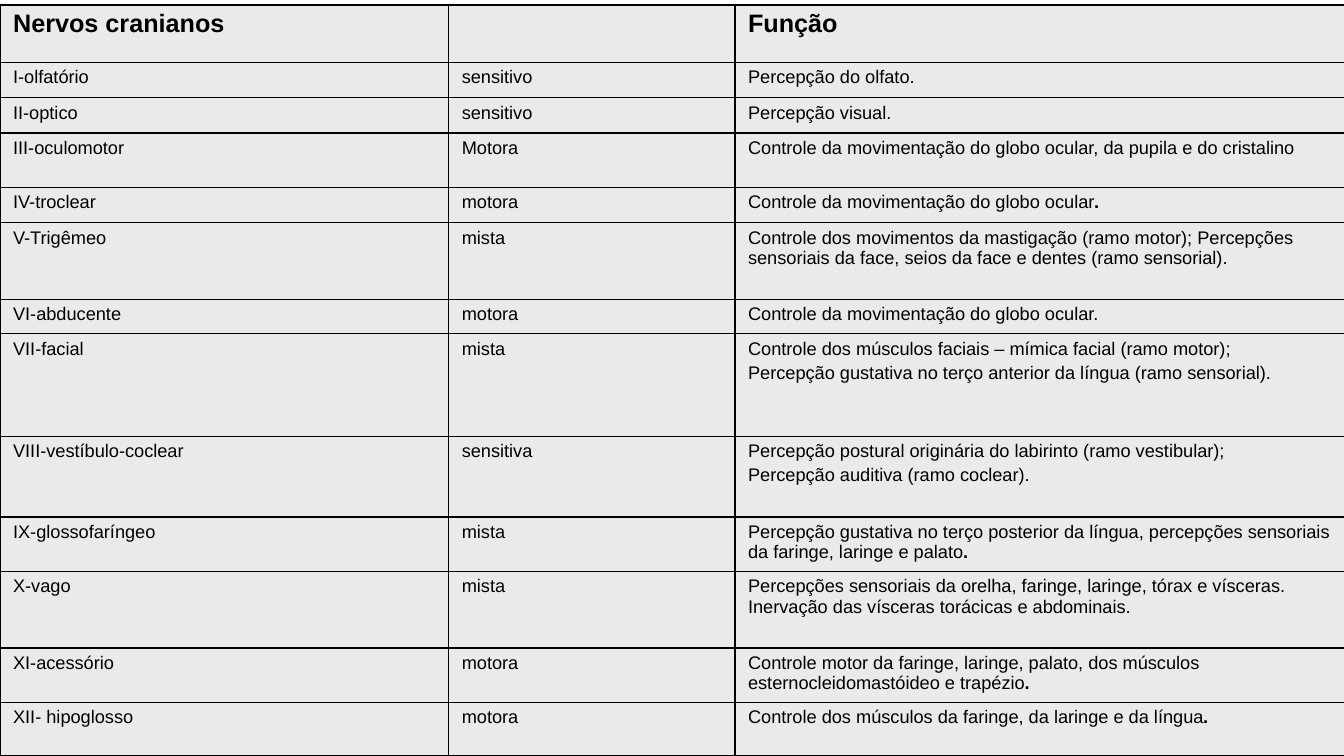
from lxml import etree
from pptx import Presentation
from pptx.dml.color import RGBColor
from pptx.oxml import ns
from pptx.util import Inches, Pt

BLACK = RGBColor(0x00, 0x00, 0x00)
GRAY = RGBColor(0xEA, 0xEA, 0xEA)
THIN, THICK = Pt(1), Pt(2.25)

COL_WIDTHS = [4.45, 2.84, 6.05]

# Row height, nerve, type, function; "\n" parts paragraphs, "|" starts bold text
ROWS = [
    (0.57, "Nervos cranianos", "", "Função"),
    (0.35, "I-olfatório", "sensitivo", "Percepção do olfato."),
    (0.35, "II-optico", "sensitivo", "Percepção visual."),
    (0.54, "III-oculomotor", "Motora",
     "Controle da movimentação do globo ocular, da pupila e do cristalino"),
    (0.35, "IV-troclear", "motora", "Controle da movimentação do globo ocular|."),
    (0.76, "V-Trigêmeo", "mista",
     "Controle dos movimentos da mastigação (ramo motor); Percepções "
     "sensoriais da face, seios da face e dentes (ramo sensorial)."),
    (0.34, "VI-abducente", "motora", "Controle da movimentação do globo ocular."),
    (1.02, "VII-facial", "mista",
     "Controle dos músculos faciais – mímica facial (ramo motor);\n"
     "Percepção gustativa no terço anterior da língua (ramo sensorial)."),
    (0.8, "VIII-vestíbulo-coclear", "sensitiva",
     "Percepção postural originária do labirinto (ramo vestibular);\n"
     "Percepção auditiva (ramo coclear)."),
    (0.54, "IX-glossofaríngeo", "mista",
     "Percepção gustativa no terço posterior da língua, percepções "
     "sensoriais da faringe, laringe e palato|."),
    (0.76, "X-vago", "mista",
     "Percepções sensoriais da orelha, faringe, laringe, tórax e vísceras. "
     "Inervação das vísceras torácicas e abdominais."),
    (0.54, "XI-acessório", "motora",
     "Controle motor da faringe, laringe, palato, dos músculos "
     "esternocleidomastóideo e trapézio|."),
    (0.54, "XII- hipoglosso", "motora",
     "Controle dos músculos da faringe, da laringe e da língua|."),
]


def add_border(cell, side, width):
    ln = etree.SubElement(cell._tc.get_or_add_tcPr(), ns.qn("a:" + side), w=str(width))
    fill = etree.SubElement(ln, ns.qn("a:solidFill"))
    etree.SubElement(fill, ns.qn("a:srgbClr"), val=str(BLACK))


def fill_text(cell, content, header):
    tf = cell.text_frame
    tf.text = content.replace("|.", "")
    for i, (p, line) in enumerate(zip(tf.paragraphs, content.split("\n"))):
        if i:
            p.space_before = Pt(2.6)
        if "|" in line:
            p.add_run().text = line.split("|")[1]
        for n, r in enumerate(p.runs):
            r.font.name = "Arial"
            r.font.size = Pt(18 if header else 13)
            r.font.bold = header or n > 0
            r.font.color.rgb = BLACK


prs = Presentation()
prs.slide_width, prs.slide_height = Inches(13.33), Inches(7.5)
s = prs.slides.add_slide(prs.slide_layouts[6])

# Table of cranial nerves
table = s.shapes.add_table(len(ROWS), len(COL_WIDTHS), Inches(0), Inches(0.05),
                           Inches(13.33), Inches(7.45)).table
table.first_row = table.horz_banding = False
for column, width in zip(table.columns, COL_WIDTHS):
    column.width = Inches(width)

# Cells: thick outer frame, thin inner lines
last_row, last_col = len(ROWS) - 1, len(COL_WIDTHS) - 1
for i, (height, *contents) in enumerate(ROWS):
    table.rows[i].height = Inches(height)
    for j, content in enumerate(contents):
        cell = table.cell(i, j)
        cell.margin_left = cell.margin_right = Inches(0.13)
        cell.margin_top = cell.margin_bottom = Inches(0.05)
        for side, outer in (("lnL", j == 0), ("lnR", j == last_col),
                            ("lnT", i == 0), ("lnB", i == last_row)):
            add_border(cell, side, THICK if outer else THIN)
        cell.fill.solid()
        cell.fill.fore_color.rgb = GRAY
        if content:
            fill_text(cell, content, header=i == 0)

prs.save("out.pptx")
